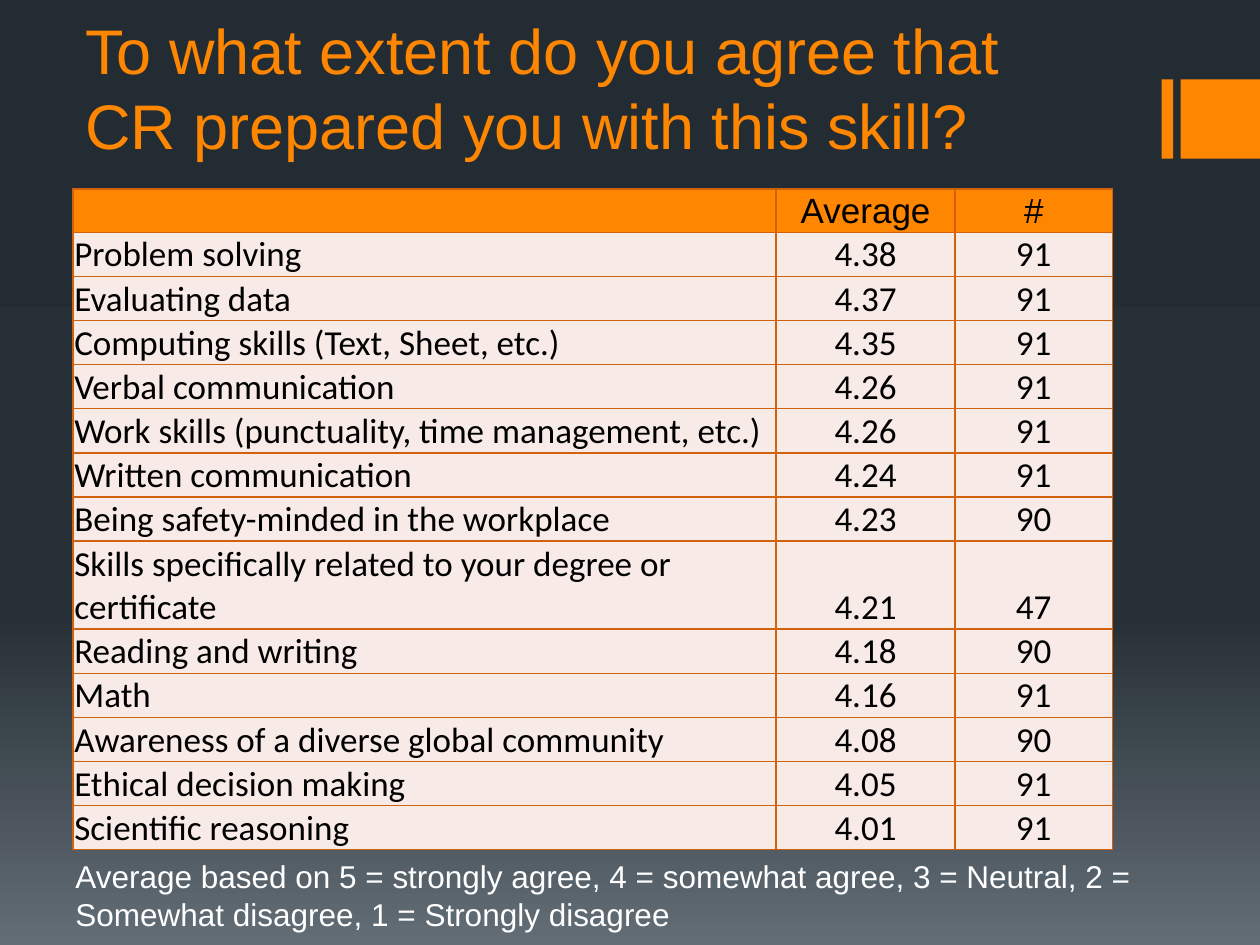
from lxml import etree
from pptx import Presentation
from pptx.dml.color import RGBColor
from pptx.enum.shapes import MSO_SHAPE
from pptx.enum.text import MSO_ANCHOR, PP_ALIGN
from pptx.oxml.ns import qn
from pptx.util import Inches, Pt

RECT = MSO_SHAPE.RECTANGLE
TOP, MIDDLE, BOTTOM = MSO_ANCHOR.TOP, MSO_ANCHOR.MIDDLE, MSO_ANCHOR.BOTTOM
LEFT, CENTER = PP_ALIGN.LEFT, PP_ALIGN.CENTER

ORANGE = RGBColor(0xFF, 0x86, 0x00)
BORDER = RGBColor(0xD2, 0x61, 0x0C)
PALE = RGBColor(0xF7, 0xEA, 0xE7)
BLACK = RGBColor(0, 0, 0)
WHITE = RGBColor(0xFF, 0xFF, 0xFF)
BACKGROUND = [(0, "242C33"), (65, "273037"), (100, "636D76")]

TITLE = "To what extent do you agree that CR prepared you with this skill?"
NOTE = ("Average based on 5 = strongly agree, 4 = somewhat agree, 3 = Neutral, "
        "2 = Somewhat disagree, 1 = Strongly disagree")
HEADER = ("", "Average", "#")
SKILLS = [
    ("Problem solving", "4.38", "91"),
    ("Evaluating data", "4.37", "91"),
    ("Computing skills (Text, Sheet, etc.)", "4.35", "91"),
    ("Verbal communication", "4.26", "91"),
    ("Work skills (punctuality, time management, etc.)", "4.26", "91"),
    ("Written communication", "4.24", "91"),
    ("Being safety-minded in the workplace", "4.23", "90"),
    ("Skills specifically related to your degree or certificate", "4.21", "47"),
    ("Reading and writing", "4.18", "90"),
    ("Math", "4.16", "91"),
    ("Awareness of a diverse global community", "4.08", "90"),
    ("Ethical decision making", "4.05", "91"),
    ("Scientific reasoning", "4.01", "91"),
]
COLUMNS = (5.58, 1.42, 1.25)
HEADER_HEIGHT, LINE_HEIGHT = 0.33, 0.35
LINE_CHARS = 50  # skill names longer than this take two lines


def set_background(slide):
    fill = slide.background.fill
    fill.gradient()
    fill.gradient_angle = 270  # top to bottom
    stops = fill._fill._gradFill.find(qn("a:gsLst"))
    for stop in list(stops):
        stops.remove(stop)
    for percent, colour in BACKGROUND:
        stop = etree.SubElement(stops, qn("a:gs"), pos=str(percent * 1000))
        etree.SubElement(stop, qn("a:srgbClr"), val=colour)


def style_text(p, font, size, colour, align=LEFT):
    p.alignment = align
    for r in p.runs:
        r.font.name, r.font.size = font, Pt(size)
        r.font.color.rgb = colour


def add_text(slide, text, box, size, colour, anchor):
    tf = slide.shapes.add_textbox(*map(Inches, box)).text_frame
    tf.word_wrap, tf.vertical_anchor = True, anchor
    tf.text = text
    p = tf.paragraphs[0]
    p.line_spacing = 1.0
    style_text(p, "Arial", size, colour)


def add_bar(slide, left, width):
    sp = slide.shapes.add_shape(RECT, *map(Inches, (left, 0.63, width, 0.63)))
    sp.shadow.inherit = False
    sp.fill.solid()
    sp.fill.fore_color.rgb = ORANGE
    sp.line.fill.background()


def set_borders(cell):
    props = cell._tc.get_or_add_tcPr()
    for i, side in enumerate(("a:lnL", "a:lnR", "a:lnT", "a:lnB")):
        line = etree.Element(qn(side), w=str(Pt(1)))
        fill = etree.SubElement(line, qn("a:solidFill"))
        etree.SubElement(fill, qn("a:srgbClr"), val=str(BORDER))
        props.insert(i, line)


def fill_cell(cell, text, font, fill, anchor, align):
    cell.text = text
    cell.vertical_anchor = anchor
    cell.margin_left = cell.margin_right = cell.margin_top = Inches(0.01)
    cell.margin_bottom = 0
    cell.fill.solid()
    cell.fill.fore_color.rgb = fill
    style_text(cell.text_frame.paragraphs[0], font, 20, BLACK, align)
    set_borders(cell)


def add_skill_table(slide):
    heights = [HEADER_HEIGHT] + [
        LINE_HEIGHT * (2 if len(name) > LINE_CHARS else 1) for name, *_ in SKILLS]
    rows = [HEADER] + SKILLS
    box = (0.58, 1.5, sum(COLUMNS), sum(heights))
    table = slide.shapes.add_table(len(rows), len(COLUMNS), *map(Inches, box)).table
    for column, width in zip(table.columns, COLUMNS):
        column.width = Inches(width)
    for r, (values, height) in enumerate(zip(rows, heights)):
        table.rows[r].height = Inches(height)
        look = ("Calibri", PALE, BOTTOM) if r else ("Arial", ORANGE, MIDDLE)
        for c, value in enumerate(values):
            fill_cell(table.cell(r, c), value, *look, CENTER if c else LEFT)


def main():
    prs = Presentation()
    prs.slide_width, prs.slide_height = Inches(10), Inches(7.5)
    slide = prs.slides.add_slide(prs.slide_layouts[6])
    set_background(slide)
    add_bar(slide, 9.22, 0.09)
    add_bar(slide, 9.37, 0.63)
    add_text(slide, TITLE, (0.58, 0.08, 8, 1.26), 36, ORANGE, BOTTOM)
    add_skill_table(slide)
    add_text(slide, NOTE, (0.5, 6.75, 9.08, 0.71), 18, WHITE, TOP)
    prs.save("out.pptx")


if __name__ == "__main__":
    main()
